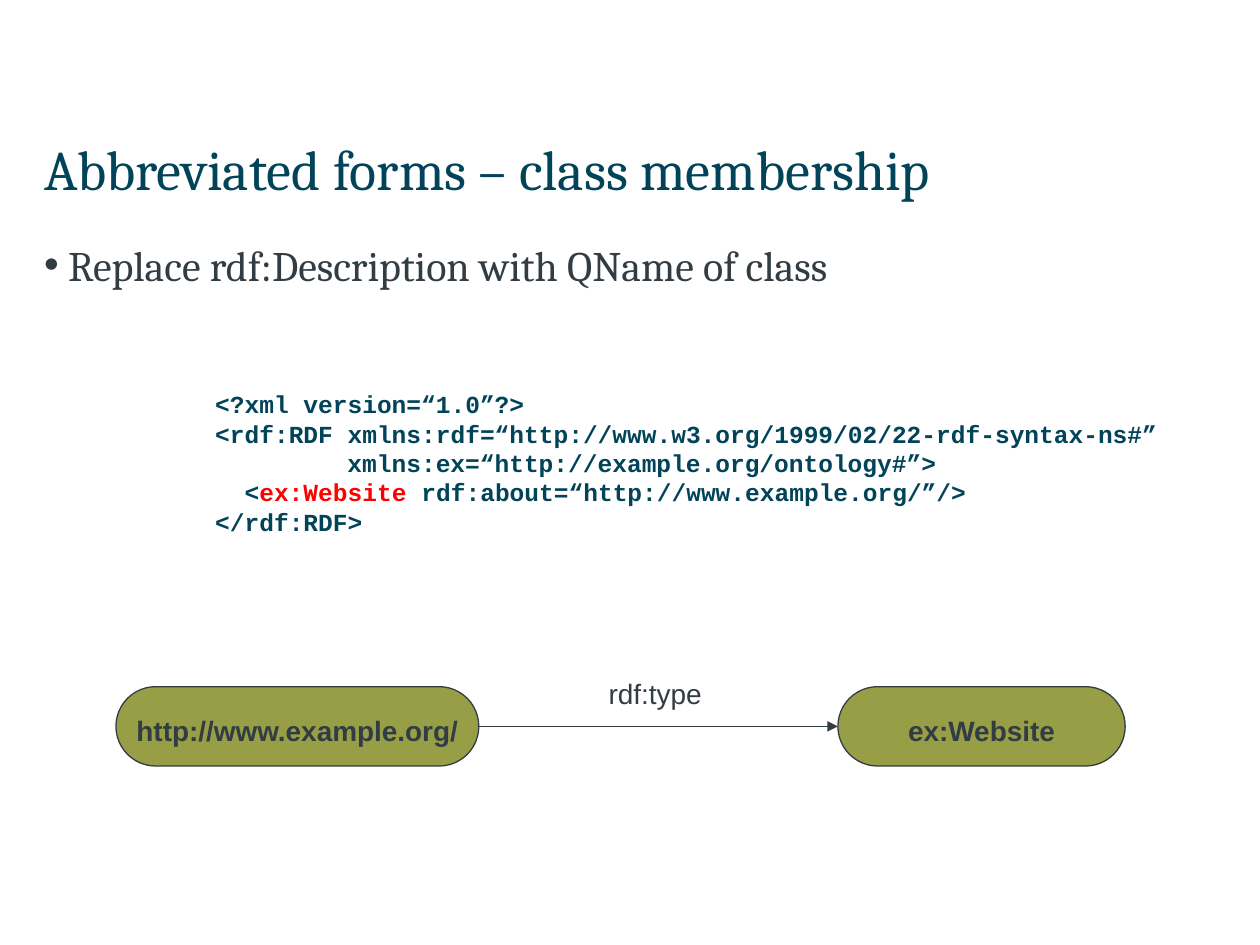
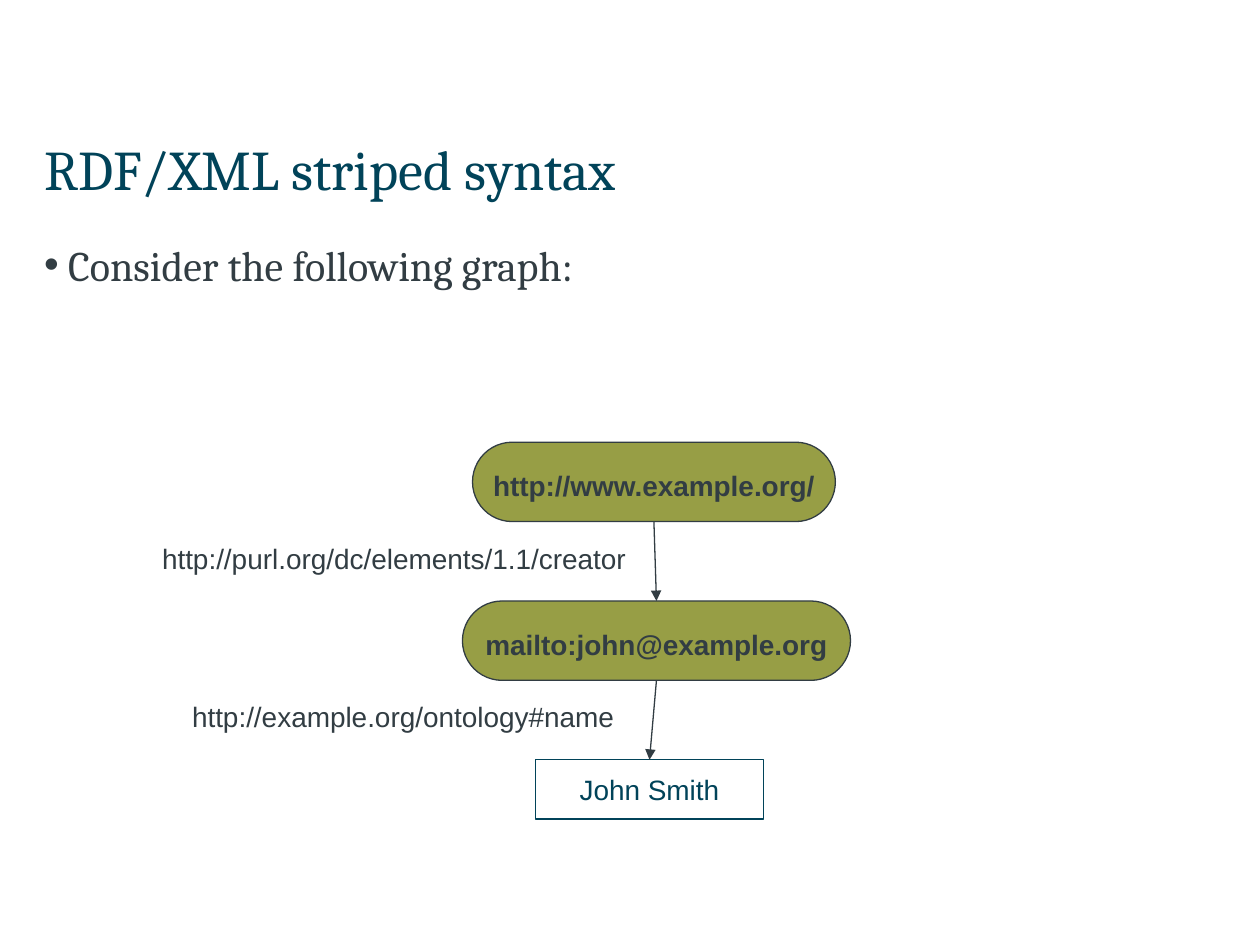
from dataclasses import dataclass

import pptx
import pptx.dml.color
import pptx.enum.shapes
import pptx.enum.text
import pptx.oxml.ns
import pptx.util
from lxml import etree

Pt = pptx.util.Pt
qn = pptx.oxml.ns.qn
RGB = pptx.dml.color.RGBColor.from_string
SHAPE = pptx.enum.shapes.MSO_SHAPE
ALIGN = pptx.enum.text.PP_ALIGN
ANCHOR = pptx.enum.text.MSO_ANCHOR


@dataclass(frozen=True)
class Theme:
    teal: str = "014359"
    slate: str = "323D43"
    olive: str = "979E45"
    red: str = "FF0000"
    white: str = "FFFFFF"
    serif: str = "Cambria"
    sans: str = "Arial"
    mono: str = "Courier New"
    title: int = 32
    body: int = 24
    label: int = 16
    code: int = 14
    line: float = 0.75


T = Theme()
TITLE_STYLE = dict(name=T.serif, size=T.title, color=T.teal)
BODY_STYLE = dict(name=T.serif, size=T.body, color=T.slate)
CODE_STYLE = dict(name=T.mono, size=T.code, color=T.teal, bold=True)
LABEL_STYLE = dict(name=T.sans, size=T.label, color=T.slate)
NODE_STYLE = dict(LABEL_STYLE, bold=True)
LITERAL_STYLE = dict(LABEL_STYLE, color=T.teal)

TITLE_BOX = (25.2, 70.56, 668.88, 51.12)
BODY_BOX = (25.2, 133.2, 668.88, 352.08)
HEADING_INSETS = (0, 3.6, 7.2, 3.6)
NODE_H, LITERAL_H, LABEL_H = 45.36, 33.84, 26.64
CODE_CHAR = 8.4

CODE = [  # indent in characters, then (text, colour) pieces
    (0, [("<?xml version=“1.0”?>", T.teal)]),
    (0, [("<rdf:RDF xmlns:rdf=“http://www.w3.org/1999/02/22-rdf-syntax-ns#”", T.teal)]),
    (9, [("xmlns:ex=“http://example.org/ontology#”>", T.teal)]),
    (2, [("<", T.teal), ("ex:Website", T.red),
         (" rdf:about=“http://www.example.org/”/>", T.teal)]),
    (0, [("</rdf:RDF>", T.teal)]),
]


def add_run(p, text, style):
    r = p.add_run()
    r.text = text
    for key, value in style.items():
        if key == "color":
            r.font.color.rgb = RGB(value)
        else:
            setattr(r.font, key, Pt(value) if key == "size" else value)


def set_frame(sp, insets=(7.2, 3.6, 7.2, 3.6), anchor=ANCHOR.TOP, wrap=True):
    tf = sp.text_frame
    tf.word_wrap = wrap
    tf.vertical_anchor = anchor
    for side, inset in zip(("left", "top", "right", "bottom"), insets):
        setattr(tf, f"margin_{side}", Pt(inset))
    return tf


def add_text(slide, box, text, style, align=ALIGN.LEFT, **frame):
    sp = slide.shapes.add_textbox(*map(Pt, box))
    p = set_frame(sp, **frame).paragraphs[0]
    p.alignment = align
    add_run(p, text, style)
    return p


def set_indent(p, left, first=0):
    pPr = p._p.get_or_add_pPr()
    pPr.set("marL", str(Pt(left)))
    pPr.set("indent", str(Pt(first)))
    return pPr


def add_heading(slide, title, bullet):
    add_text(slide, TITLE_BOX, title, TITLE_STYLE, insets=HEADING_INSETS,
             anchor=ANCHOR.MIDDLE)
    p = add_text(slide, BODY_BOX, bullet, BODY_STYLE, insets=HEADING_INSETS)
    p.space_after = Pt(18)
    pPr = set_indent(p, 13.68, -13.68)
    etree.SubElement(pPr, qn("a:buFont")).set("typeface", T.sans)
    etree.SubElement(pPr, qn("a:buChar")).set("char", "•")


def add_code(slide, box):
    tf = set_frame(slide.shapes.add_textbox(*map(Pt, box)))
    for i, (indent, pieces) in enumerate(CODE):
        p = tf.add_paragraph() if i else tf.paragraphs[0]
        set_indent(p, indent * CODE_CHAR)
        for text, color in pieces:
            add_run(p, text, dict(CODE_STYLE, color=color))


def add_box(slide, kind, box, text, fill, line, style, insets):
    sp = slide.shapes.add_shape(kind, *map(Pt, box))
    sp.shadow.inherit = False
    sp.fill.solid()
    sp.fill.fore_color.rgb = RGB(fill)
    sp.line.color.rgb = RGB(line)
    sp.line.width = Pt(T.line)
    p = set_frame(sp, insets, ANCHOR.MIDDLE, wrap=False).paragraphs[0]
    p.alignment = ALIGN.CENTER
    add_run(p, text, style)
    return sp


def add_resource(slide, left, top, width, text):
    """A pill-shaped node; its text sits slightly below the middle."""
    sp = add_box(slide, SHAPE.ROUNDED_RECTANGLE, (left, top, width, NODE_H), text,
                 T.olive, T.slate, NODE_STYLE, (0, 4.3, 0, 0))
    sp.adjustments[0] = 0.5
    return sp


def add_literal(slide, left, top, width, text):
    return add_box(slide, SHAPE.RECTANGLE, (left, top, width, LITERAL_H), text,
                   T.white, T.teal, LITERAL_STYLE, (7.2, 3.6, 7.2, 3.6))


def add_arrow(slide, start, start_site, end, end_site):
    cxn = slide.shapes.add_connector(
        pptx.enum.shapes.MSO_CONNECTOR.STRAIGHT, 0, 0, 0, 0)
    cxn.begin_connect(start, start_site)
    cxn.end_connect(end, end_site)
    cxn.line.color.rgb = RGB(T.slate)
    cxn.line.width = Pt(T.line)
    etree.SubElement(cxn.line._get_or_add_ln(), qn("a:tailEnd")).set("type", "triangle")
    etree.SubElement(cxn._element.spPr, qn("a:effectLst"))


def add_label(slide, left, top, width, text, align=ALIGN.CENTER, wrap=False):
    add_text(slide, (left, top, width, LABEL_H), text, LABEL_STYLE, align,
             anchor=ANCHOR.MIDDLE, wrap=wrap)


def add_type_graph(slide, box):
    """Two nodes at the ends of the box, joined by a labelled arrow."""
    x, y, w, h = box
    site_w, class_w = 207.36, 164.16
    site = add_resource(slide, x, y, site_w, "http://www.example.org/")
    cls = add_resource(slide, x + w - class_w, y, class_w, "ex:Website")
    add_arrow(slide, site, 3, cls, 1)
    add_label(slide, x + 274.32, y - 9.36, 67.68, "rdf:type")


def add_creator_graph(slide, box):
    """Three nodes down the box, with gaps as high as a node."""
    x, y, w, h = box
    pitch = 2 * NODE_H
    nodes = [
        add_resource(slide, x + 185.76, y, 207.36, "http://www.example.org/"),
        add_resource(slide, x + 180, y + pitch, 221.76, "mailto:john@example.org"),
        add_literal(slide, x + 221.76, y + 2 * pitch, 130.32, "John Smith"),
    ]
    for start, end in zip(nodes, nodes[1:]):
        add_arrow(slide, start, 2, end, 0)
    add_label(slide, x, y + 53.28, 285.12,
              "http://purl.org/dc/elements/1.1/creator ", ALIGN.RIGHT, wrap=True)
    add_label(slide, x + 18, y + 143.28, 256.32, "http://example.org/ontology#name")


def class_membership_slide(slide):
    add_heading(slide, "Abbreviated forms – class membership",
                "Replace rdf:Description with QName of class")
    add_code(slide, (115.92, 218.88, 578.16, 90.72))
    add_type_graph(slide, (66.24, 392.4, 576.72, NODE_H))


def striped_syntax_slide(slide):
    add_heading(slide, "RDF/XML striped syntax", "Consider the following graph:")
    add_creator_graph(slide, (84.24, 252.72, 401.76, 215.28))


def main():
    prs = pptx.Presentation()
    prs.slide_width, prs.slide_height = Pt(720), Pt(540)
    for build in (class_membership_slide, striped_syntax_slide):
        build(prs.slides.add_slide(prs.slide_layouts[6]))
    prs.save("out.pptx")


if __name__ == "__main__":
    main()
